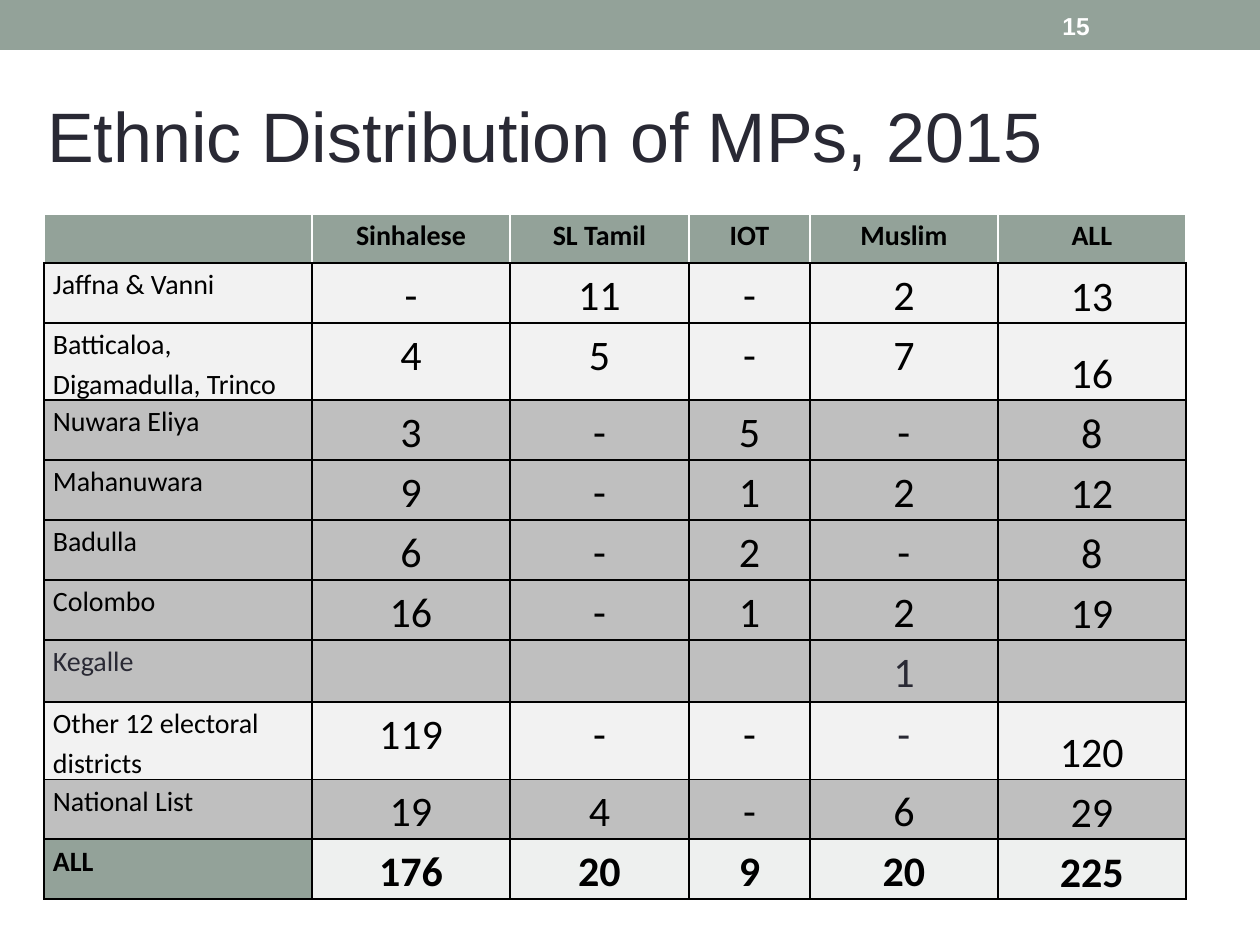
from dataclasses import dataclass

from lxml import etree
from pptx import Presentation, util as u
from pptx.dml.color import RGBColor
from pptx.enum import shapes, text
from pptx.oxml.ns import qn


@dataclass(frozen=True)
class Theme:
    sage: str = "93A299"
    ink: str = "292934"
    black: str = "000000"
    white: str = "FFFFFF"
    light: str = "F2F2F2"
    grey: str = "BFBFBF"
    total: str = "EEF0EF"
    heading_font: str = "Arial"
    table_font: str = "Calibri"
    title_size: int = 40
    number_size: int = 14
    label_size: int = 16
    value_size: int = 24


THEME = Theme()
EMU_PER_PX = 914400 / 126
COLUMN_WIDTHS = [268, 198, 179, 121, 188, 188]
ROW_HEIGHTS = [49, 60, 62, 60, 60, 60, 60, 62, 62, 60, 60]
ROWS = [
    ["", "Sinhalese", "SL Tamil", "IOT", "Muslim", "ALL"],
    ["Jaffna & Vanni", "-", "11", "-", "2", "13"],
    ["Batticaloa, Digamadulla, Trinco", "4", "5", "-", "7", "16"],
    ["Nuwara Eliya", "3", "-", "5", "-", "8"],
    ["Mahanuwara", "9", "-", "1", "2", "12"],
    ["Badulla", "6", "-", "2", "-", "8"],
    ["Colombo", "16", "-", "1", "2", "19"],
    ["Kegalle", "", "", "", "1", ""],
    ["Other 12 electoral districts", "119", "-", "-", "-", "120"],
    ["National List", "19", "4", "-", "6", "29"],
    ["ALL", "176", "20", "9", "20", "225"],
]
LAST_ROW, LAST_COLUMN = len(ROWS) - 1, len(COLUMN_WIDTHS) - 1
LIGHT_ROWS = {1, 2, 8}
KEGALLE_ROW = 7
INK_CELLS = {(KEGALLE_ROW, column) for column in range(6)} | {(8, 4)}


def px(length):
    """Turn pixels into EMU."""
    return u.Emu(round(length * EMU_PER_PX))


def set_font(paragraph, name, size, color, bold=False):
    """Style all the text of a paragraph."""
    font = paragraph.font
    font.name, font.size, font.bold = name, u.Pt(size), bold
    font.color.rgb = RGBColor.from_string(color)


def add_band(slide, left, top, width, height):
    """Add a plain filled rectangle."""
    shape = slide.shapes.add_shape(
        shapes.MSO_SHAPE.RECTANGLE, px(left), px(top), px(width), px(height))
    shape.shadow.inherit = False
    shape.fill.solid()
    shape.fill.fore_color.rgb = RGBColor.from_string(THEME.sage)
    shape.line.fill.background()


def add_text(slide, box, words, size, color, bold=False):
    """Add a wrapped text box and return its frame."""
    frame = slide.shapes.add_textbox(*map(px, box)).text_frame
    frame.word_wrap = True
    frame.text = words
    set_font(frame.paragraphs[0], THEME.heading_font, size, color, bold)
    return frame


def set_borders(cell, colors):
    """Draw one-point borders, given as colours by side."""
    properties = cell._tc.get_or_add_tcPr()
    for side, color in colors.items():
        line = etree.SubElement(properties, qn(f"a:ln{side}"), w=str(u.Pt(1)))
        fill = etree.SubElement(line, qn("a:solidFill"))
        etree.SubElement(fill, qn("a:srgbClr"), val=color)


def cell_fill(row, column):
    """Choose the fill colour of a table cell."""
    if row == 0 or (row == LAST_ROW and column == 0):
        return THEME.sage
    if row == LAST_ROW:
        return THEME.total
    return THEME.light if row in LIGHT_ROWS else THEME.grey


def format_cell(cell, row, column, words):
    """Write and style one table cell."""
    edge = THEME.white if row == 0 else THEME.black
    set_borders(cell, {"L": edge, "R": edge, "T": edge, "B": THEME.black})
    cell.fill.solid()
    cell.fill.fore_color.rgb = RGBColor.from_string(cell_fill(row, column))
    cell.margin_left = cell.margin_right = px(9)
    cell.margin_top = cell.margin_bottom = 0
    if column == LAST_COLUMN and row > 0:
        cell.vertical_anchor = text.MSO_ANCHOR.BOTTOM
    cell.text = words
    paragraph = cell.text_frame.paragraphs[0]
    paragraph.line_spacing = 1.15
    if column > 0:
        paragraph.alignment = text.PP_ALIGN.CENTER
    size = THEME.label_size if row == 0 or column == 0 else THEME.value_size
    color = THEME.ink if (row, column) in INK_CELLS else THEME.black
    set_font(paragraph, THEME.table_font, size, color, row in (0, LAST_ROW))


def add_seat_table(slide, left, top):
    """Add the table of seats by district and ethnic group."""
    table = slide.shapes.add_table(
        len(ROWS), len(COLUMN_WIDTHS), px(left), px(top),
        px(sum(COLUMN_WIDTHS)), px(sum(ROW_HEIGHTS))).table
    table.first_row = table.horz_banding = False
    for column, width in zip(table.columns, COLUMN_WIDTHS):
        column.width = px(width)
    for row, height in zip(table.rows, ROW_HEIGHTS):
        row.height = px(height)
    for row, entries in enumerate(ROWS):
        for column, words in enumerate(entries):
            format_cell(table.cell(row, column), row, column, words)


def main():
    """Build and save the slide."""
    presentation = Presentation()
    presentation.slide_width, presentation.slide_height = px(1260), px(945)
    slide = presentation.slides.add_slide(presentation.slide_layouts[6])
    add_band(slide, 0, 0, 1260, 50)
    number = add_text(slide, (1050, 3, 147, 45), "15",
                      THEME.number_size, THEME.white, bold=True)
    number.vertical_anchor = text.MSO_ANCHOR.MIDDLE
    add_seat_table(slide, 44, 214)
    title = add_text(slide, (35, 86, 1131, 97), "Ethnic Distribution of MPs, 2015",
                     THEME.title_size, THEME.ink)
    title.auto_size = text.MSO_AUTO_SIZE.SHAPE_TO_FIT_TEXT
    presentation.save("out.pptx")


if __name__ == "__main__":
    main()
